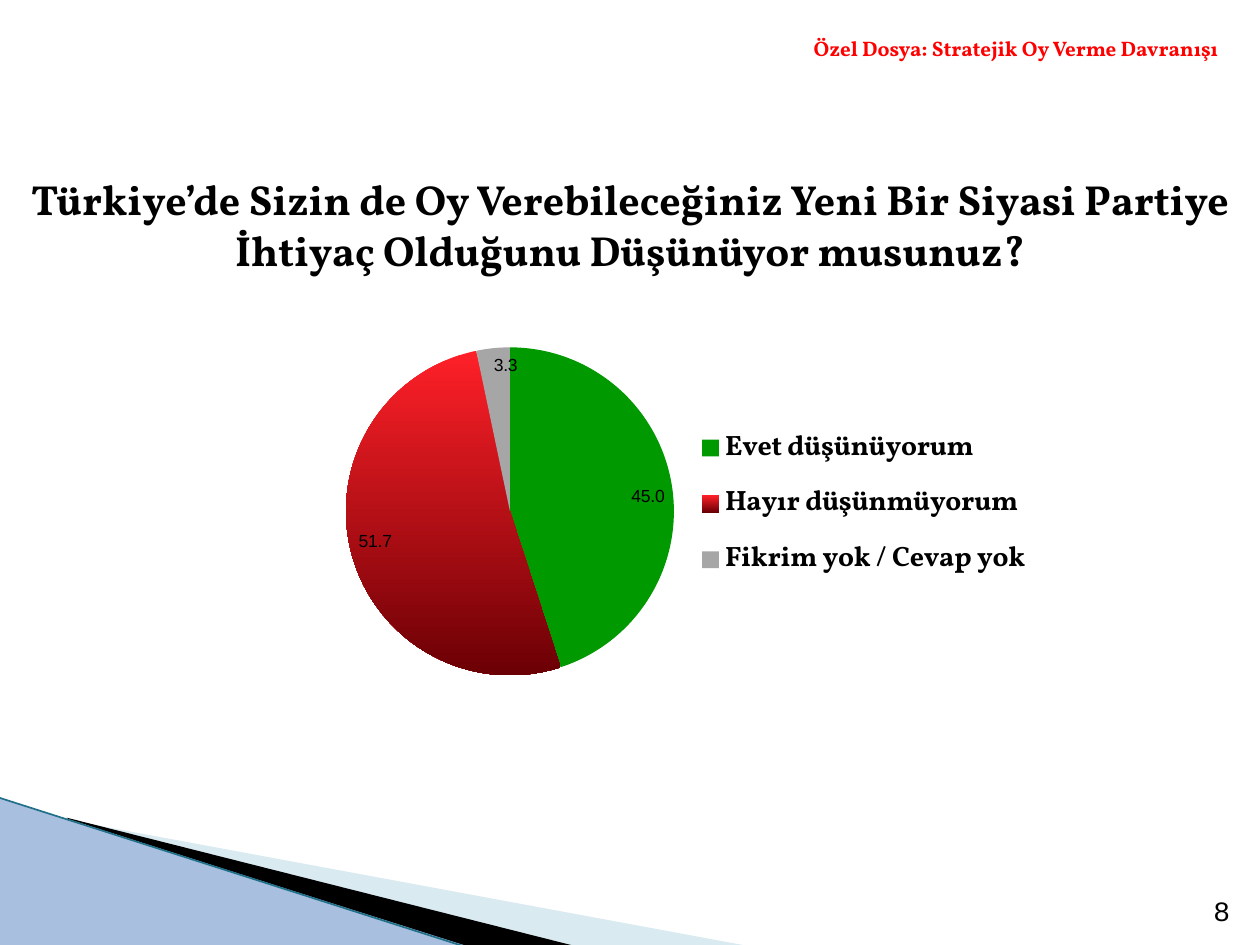
from pptx import Presentation
from pptx.chart.data import CategoryChartData
from pptx.dml.color import RGBColor as RGB
from pptx.enum.chart import XL_CHART_TYPE as CT, XL_LABEL_POSITION as LP, XL_LEGEND_POSITION as LG
from pptx.enum.shapes import MSO_CONNECTOR as MC, MSO_SHAPE as MS
from pptx.enum.text import MSO_ANCHOR as MA, PP_ALIGN as PA
from pptx.oxml import parse_xml
from pptx.oxml.ns import nsdecls, qn
from pptx.util import Inches, Pt
from lxml import etree

T = {
    "ink": RGB.from_string("000000"), "red": RGB.from_string("FF0000"),
    "pale": RGB.from_string("A0CBDC"), "blue": RGB.from_string("A8BFDF"),
    "edge": RGB.from_string("1F7088"), "yes": RGB.from_string("009900"),
    "no_top": RGB.from_string("FF2028"), "no_end": RGB.from_string("6B0005"),
    "none": RGB.from_string("A6A6A6"),
    "serif": "Vollkorn", "mono": "Courier New", "sans": "Arial",
    "title": Pt(24), "body": Pt(16), "tag": Pt(12), "label": Pt(10),
}

prs = Presentation()
prs.slide_width, prs.slide_height = Inches(10), Inches(7.5)
s = prs.slides.add_slide(prs.slide_layouts[6])
COL, ROW = prs.slide_width / 100, prs.slide_height / 75


def grid(*v):
    return [round(n * (ROW if i % 2 else COL)) for i, n in enumerate(v)]


def style(f, font, size, color, bold):
    f.name, f.size, f.bold = font, size, bold
    f.color.rgb = color


wedges = [
    ([(5.5, 65.1), (59.5, 75.1), (45.6, 75.1), (5.5, 65)], "pale", 40),
    ([(5.3, 64.9), (45.7, 75.1), (37.2, 75.2), (5.4, 65)], "ink", 100),
]
for pts, color, alpha in wedges:
    fb = s.shapes.build_freeform(*grid(*pts[0]))
    fb.add_line_segments([grid(*pt) for pt in pts[1:]], close=True)
    sp = fb.convert_to_shape()
    sp.shadow.inherit = False
    sp.fill.solid()
    sp.fill.fore_color.rgb = T[color]
    sp.line.fill.background()
    if alpha < 100:
        clr = sp.fill._xPr.find(qn("a:solidFill"))[0]
        etree.SubElement(clr, qn("a:alpha")).set("val", str(alpha * 1000))

sp = s.shapes.add_shape(MS.RIGHT_TRIANGLE, *grid(-0.1, 63.3, 37.2, 11.8))
sp.shadow.inherit = False
sp.fill.solid()
sp.fill.fore_color.rgb = T["blue"]
sp.line.fill.background()

ln = s.shapes.add_connector(MC.STRAIGHT, *grid(-0.1, 63.3, 37.1, 75.2))
ln.line.color.rgb = T["edge"]
ln.line.width = Pt(0.95)
etree.SubElement(ln._element.spPr, qn("a:effectLst"))

texts = [
    ("8", (91.4, 70.1, 7.2, 4), PA.RIGHT, MA.BOTTOM, "mono", "body", "ink", False),
    ("Türkiye’de Sizin de Oy Verebileceğiniz Yeni Bir Siyasi Partiye "
     "İhtiyaç Olduğunu Düşünüyor musunuz?",
     (0.8, 13.3, 98.4, 9.1), PA.CENTER, MA.TOP, "serif", "title", "ink", True),
    ("Özel Dosya: Stratejik Oy Verme Davranışı",
     (8.6, 2.3, 89.1, 3), PA.RIGHT, MA.TOP, "serif", "tag", "red", True),
]
for text, box, align, anchor, font, size, color, bold in texts:
    tf = s.shapes.add_textbox(*grid(*box)).text_frame
    tf.word_wrap = True
    tf.vertical_anchor = anchor
    p = tf.paragraphs[0]
    p.alignment = align
    r = p.add_run()
    r.text = text
    style(r.font, T[font], T[size], T[color], bold)

data = CategoryChartData(number_format="0.0")
data.categories = ["Evet düşünüyorum", "Hayır düşünmüyorum", "Fikrim yok / Cevap yok"]
data.add_series("Series 1", [45.0, 51.7, 3.3])
ch = s.shapes.add_chart(CT.PIE, *grid(16.5, 18.3, 68.5, 39.8), data).chart
ch.has_title = False
style(ch.font, T["serif"], T["body"], T["ink"], True)
ch.has_legend = True
ch.legend.position = LG.RIGHT
ch.legend.include_in_layout = False
style(ch.legend.font, T["serif"], T["body"], T["ink"], True)

plot = ch.plots[0]
plot.vary_by_categories = True
plot.has_data_labels = True
dl = plot.data_labels
dl.show_value, dl.show_percentage = True, False
dl.number_format, dl.number_format_is_linked = "0.0", False
dl.position = LP.INSIDE_END
style(dl.font, T["sans"], T["label"], T["ink"], False)

yes, no, none = [plot.series[0].points[i].format for i in range(3)]
for fmt, color in ((yes, "yes"), (none, "none")):
    fmt.fill.solid()
    fmt.fill.fore_color.rgb = T[color]
no.fill.gradient()
no.fill.gradient_angle = 270
for stop, color in zip(no.fill.gradient_stops, ("no_top", "no_end")):
    stop.color.rgb = T[color]
for fmt in (yes, no, none):
    fmt.line.fill.background()

area = ch._chartSpace.chart.plotArea
layouts = [
    (area, 0, '<c:layoutTarget val="inner"/>', (0.16, 0.13, 0.38, 0.86)),
    (ch.legend._element, 1, "", (0.56, 0.36, 0.4, 0.37)),
]
for el, pos, target, box in layouts:
    for old in el.findall(qn("c:layout")):
        el.remove(old)
    dims = "".join(f'<c:{k} val="{v}"/>' for k, v in zip("xywh", box))
    mode = '<c:xMode val="edge"/><c:yMode val="edge"/>'
    el.insert(pos, parse_xml(
        f'<c:layout {nsdecls("c")}><c:manualLayout>{target}{mode}{dims}'
        "</c:manualLayout></c:layout>"))

prs.save("out.pptx")
